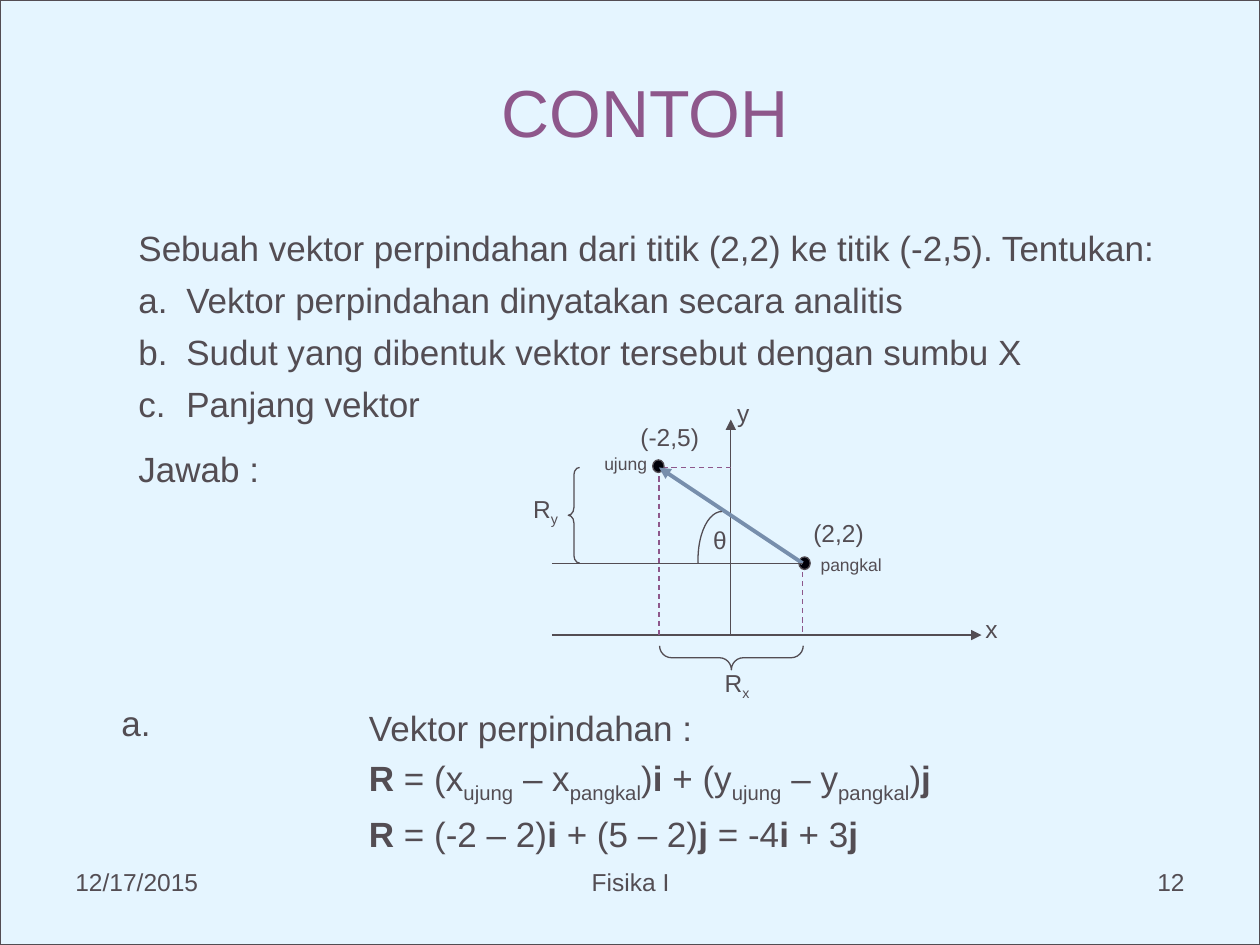
from dataclasses import dataclass

from pptx import Presentation
from pptx.dml.color import RGBColor
from pptx.enum.dml import MSO_LINE
from pptx.enum.shapes import MSO_CONNECTOR, MSO_SHAPE
from pptx.enum.text import MSO_ANCHOR, PP_ALIGN
from pptx.oxml.ns import qn
from pptx.util import Inches, Pt
from lxml.etree import SubElement


@dataclass(frozen=True)
class Theme:
    font: str = "Arial"
    ink: str = "534D53"
    plum: str = "8E578B"
    steel: str = "778EAC"
    dot: str = "000008"
    sky: str = "E5F5FF"
    title: int = 38
    body: int = 20
    label: int = 14
    small: int = 10
    thin: float = 0.75
    thick: float = 2.25


THEME = Theme()
LEFT, MID, RIGHT = PP_ALIGN.LEFT, PP_ALIGN.CENTER, PP_ALIGN.RIGHT
TAIL_X, TAIL_Y = 5.23, 3.71
HEAD_X, HEAD_Y = 6.37, 4.47
AXIS_X, AXIS_Y = 5.8, 5.04
EDGE_X = 4.38


def rgb(code):
    return RGBColor.from_string(code)


def add_run(para, part, size, color):
    run = para.add_run()
    run.text = part.lstrip("*_")
    font = run.font
    font.name, font.size = THEME.font, Pt(size)
    font.color.rgb = rgb(color)
    font.bold = part.startswith("*")
    if part.startswith("_"):
        run._r.get_or_add_rPr().set("baseline", "-25000")


def add_text(slide, box, text, size=THEME.label, color=THEME.ink, align=LEFT,
             anchor=MSO_ANCHOR.TOP, gap=0, hang=0):
    frame = slide.shapes.add_textbox(*map(Inches, box)).text_frame
    frame.word_wrap = True
    frame.vertical_anchor = anchor
    for i, line in enumerate(text.split("\n")):
        para = frame.paragraphs[0] if i == 0 else frame.add_paragraph()
        para.alignment = align
        if i and gap:
            para.space_before = Pt(gap)
        if hang:
            props = para._p.get_or_add_pPr()
            props.set("marL", str(Inches(hang)))
            props.set("indent", str(-Inches(hang)))
            if line.startswith("#"):
                mark = SubElement(props, qn("a:buAutoNum"))
                mark.set("type", "alphaLcPeriod")
        for part in line.lstrip("#").split("|"):
            add_run(para, part, size, color)


def add_line(slide, start, end, color=THEME.ink, width=THEME.thin,
             dash=False, arrow=False):
    line = slide.shapes.add_connector(
        MSO_CONNECTOR.STRAIGHT, *map(Inches, start + end))
    line.line.color.rgb = rgb(color)
    line.line.width = Pt(width)
    if dash:
        line.line.dash_style = MSO_LINE.DASH
    if arrow:
        SubElement(line.line._get_or_add_ln(), qn("a:tailEnd")).set("type", "triangle")
    SubElement(line._element.spPr, qn("a:effectLst"))


def add_form(slide, kind, box, fill=None, adjust=(), turn=0):
    form = slide.shapes.add_shape(kind, *map(Inches, box))
    form.shadow.inherit = False
    form.rotation = turn
    for i, value in enumerate(adjust):
        form.adjustments[i] = value
    if fill:
        form.fill.solid()
        form.fill.fore_color.rgb = rgb(fill)
    else:
        form.fill.background()
    form.line.color.rgb = rgb(THEME.ink)
    form.line.width = Pt(THEME.thin)


def add_words(slide):
    add_text(slide, (0.5, 6.83, 2.33, 0.52), "12/17/2015")
    add_text(slide, (3.42, 6.83, 3.17, 0.52), "Fisika I", align=MID)
    add_text(slide, (7.17, 6.83, 2.33, 0.52), "12", align=RIGHT)
    add_text(slide, (3.83, 0.42, 2.58, 0.92), "CONTOH", size=THEME.title,
             color=THEME.plum, align=MID, anchor=MSO_ANCHOR.MIDDLE)
    add_text(slide, (1, 1.75, 8.42, 1.68),
             "Sebuah vektor perpindahan dari titik (2,2) ke titik (-2,5). Tentukan:\n"
             "#Vektor perpindahan dinyatakan secara analitis\n"
             "#Sudut yang dibentuk vektor tersebut dengan sumbu X\n"
             "#Panjang vektor", size=THEME.body, gap=5.75, hang=0.38)
    add_text(slide, (1, 3.5, 1.17, 0.43), "Jawab :", size=THEME.body)
    add_text(slide, (0.83, 5.52, 0.5, 0.43), "a.", size=THEME.body, align=MID)
    add_text(slide, (2.83, 5.56, 6.83, 1.23),
             "Vektor perpindahan :\n"
             "*R| = (x|_ujung| – x|_pangkal|)|*i |+ (y|_ujung| – y|_pangkal|)|*j\n"
             "*R |= (-2 – 2)|*i |+ (5 – 2)|*j |= -4|*i| + 3|*j",
             size=THEME.body, gap=4.6)


def add_graph(slide):
    head, tail = (HEAD_X, HEAD_Y), (TAIL_X, TAIL_Y)
    add_line(slide, (AXIS_X, AXIS_Y), (AXIS_X, 3.33), arrow=True)
    add_line(slide, (EDGE_X, AXIS_Y), (7.79, AXIS_Y), arrow=True)
    for x, y in (head, tail):
        add_line(slide, (AXIS_X, y), (x, y), color=THEME.plum, dash=True)
        add_line(slide, (x, y), (x, AXIS_Y), color=THEME.plum, dash=True)
    for x, y in ((6.34, 4.42), (5.18, 3.65)):
        add_form(slide, MSO_SHAPE.FLOWCHART_CONNECTOR, (x, y, 0.09, 0.1),
                 fill=THEME.dot)
    add_line(slide, head, tail, color=THEME.steel, width=THEME.thick, arrow=True)
    add_line(slide, (EDGE_X, HEAD_Y), head)
    add_form(slide, MSO_SHAPE.ARC, (5.54, 4.06, 0.38, 0.76),
             adjust=(171 * 0.6, 270 * 0.6))
    add_form(slide, MSO_SHAPE.LEFT_BRACE, (5.71, 4.65, 0.19, 1.14),
             adjust=(0.5, 0.5), turn=270)
    add_form(slide, MSO_SHAPE.LEFT_BRACE, (4.51, TAIL_Y, 0.09, 0.76),
             adjust=(0.67, 0.5))
    labels = (
        ("(2,2)", 6.18, 4.06, 0.95), ("(-2,5)", 4.84, 3.3, 0.95),
        ("x", 7.68, 4.82, 0.38), ("y", 5.71, 3.11, 0.38),
        ("θ", 5.48, 4.12, 0.47),
        ("R|_x", 5.52, 5.25, 0.66), ("R|_y", 4, 3.87, 0.66),
    )
    for text, x, y, wide in labels:
        add_text(slide, (x, y, wide, 0.38), text, align=MID)
    for text, x, y in (("pangkal", 6.28, 4.35), ("ujung", 4.49, 3.55)):
        add_text(slide, (x, y, 0.95, 0.3), text, size=THEME.small, align=MID)


def main():
    deck = Presentation()
    deck.slide_width, deck.slide_height = Inches(10), Inches(7.5)
    slide = deck.slides.add_slide(deck.slide_layouts[6])
    add_form(slide, MSO_SHAPE.RECTANGLE, (0, 0, 10, 7.5), fill=THEME.sky)
    add_words(slide)
    add_graph(slide)
    deck.save("out.pptx")


if __name__ == "__main__":
    main()
